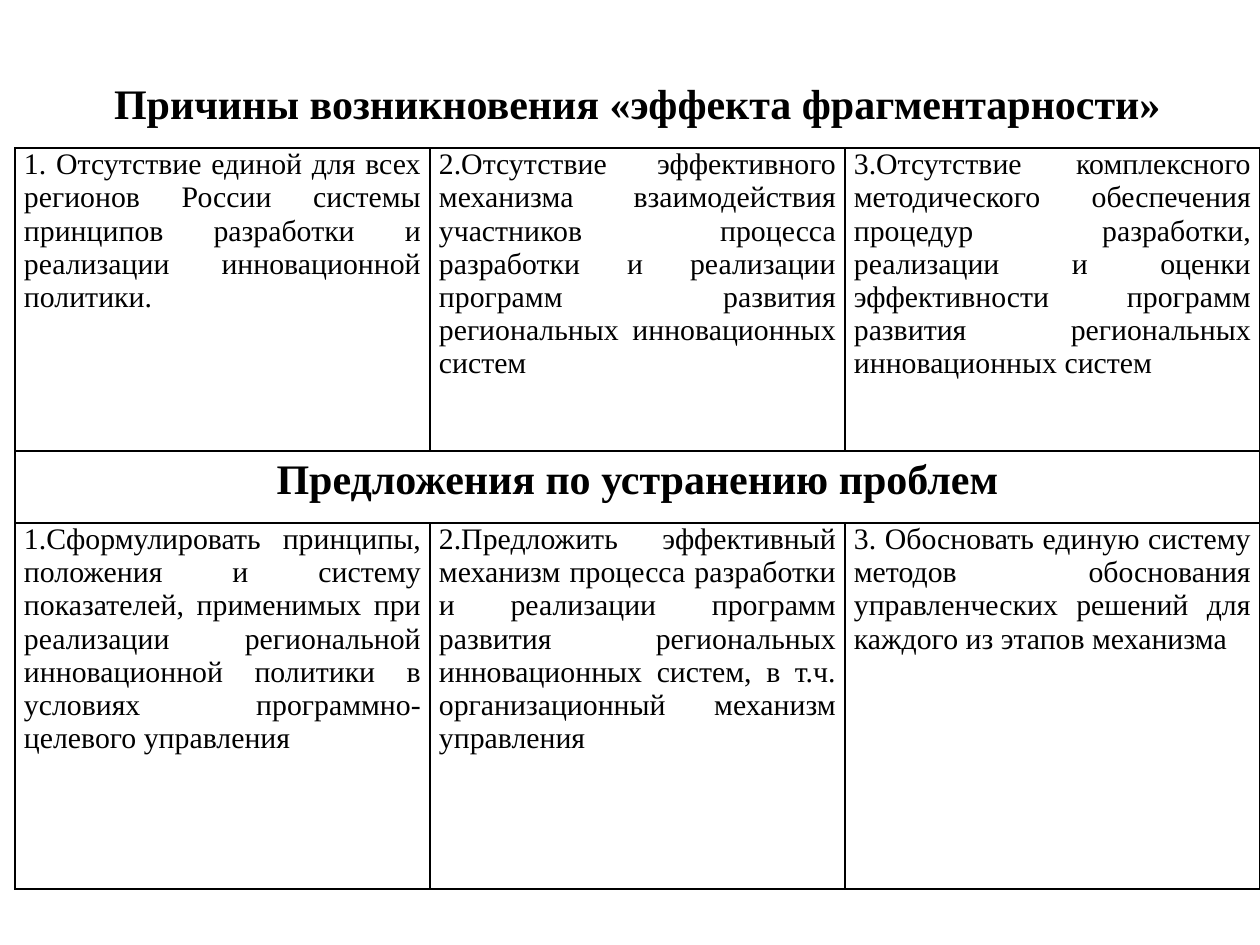
from lxml.etree import SubElement
from pptx import Presentation
from pptx.dml.color import RGBColor
from pptx.enum.text import PP_ALIGN
from pptx.oxml.ns import qn
from pptx.util import Emu, Pt

PX = 914400 // 126
BLACK = RGBColor(0x00, 0x00, 0x00)
WHITE = RGBColor(0xFF, 0xFF, 0xFF)
FONT = "Times New Roman"

SECTIONS = [
    ("Причины возникновения «эффекта фрагментарности»", [
        "1. Отсутствие единой для всех регионов России системы принципов "
        "разработки и реализации инновационной политики.",
        "2.Отсутствие эффективного механизма взаимодействия участников процесса "
        "разработки и реализации программ развития региональных инновационных систем",
        "3.Отсутствие комплексного методического обеспечения процедур разработки, "
        "реализации и оценки эффективности программ развития региональных "
        "инновационных систем",
    ]),
    ("Предложения по устранению проблем", [
        "1.Сформулировать принципы, положения и систему показателей, применимых при "
        "реализации региональной инновационной политики в условиях "
        "программно-целевого управления",
        "2.Предложить эффективный механизм процесса разработки и реализации программ "
        "развития региональных инновационных систем, в т.ч. организационный механизм "
        "управления",
        "3. Обосновать единую систему методов обоснования управленческих решений "
        "для каждого из этапов механизма",
    ]),
]
LEFT, TOP = 15, 76
COLUMN_WIDTH = 415
ROW_HEIGHTS = [72, 303, 72, 366]
BODY_INSET = 9


def px(length):
    return Emu(length * PX)


def write(cell, text, size, alignment, bold=False):
    paragraph = cell.text_frame.paragraphs[0]
    paragraph.alignment = alignment
    run = paragraph.add_run()
    run.text = text
    run.font.name = FONT
    run.font.size = Pt(size)
    run.font.bold = bold
    run.font.color.rgb = BLACK


def set_borders(cell, visible):
    """Draw the sides named in visible (of L, R, T, B) and clear the others."""
    properties = cell._tc.get_or_add_tcPr()
    for position, side in enumerate("LRTB"):
        line = SubElement(properties, qn(f"a:ln{side}"), w=str(Pt(1)))
        properties.insert(position, line)
        if side in visible:
            fill = SubElement(line, qn("a:solidFill"))
            SubElement(fill, qn("a:srgbClr"), val=str(BLACK))
        else:
            SubElement(line, qn("a:noFill"))


presentation = Presentation()
presentation.slide_width = px(1260)
presentation.slide_height = px(945)
slide = presentation.slides.add_slide(presentation.slide_layouts[6])

column_count = len(SECTIONS[0][1])
table = slide.shapes.add_table(
    len(ROW_HEIGHTS), column_count, px(LEFT), px(TOP),
    px(COLUMN_WIDTH * column_count), px(sum(ROW_HEIGHTS))).table
table.first_row = False
table.horz_banding = False
for column in table.columns:
    column.width = px(COLUMN_WIDTH)
for row, height in zip(table.rows, ROW_HEIGHTS):
    row.height = px(height)

for section, (heading, points) in enumerate(SECTIONS):
    heading_row = 2 * section
    heading_cell = table.cell(heading_row, 0)
    heading_cell.merge(table.cell(heading_row, column_count - 1))
    write(heading_cell, heading, 24, PP_ALIGN.CENTER, bold=True)
    for column, point in enumerate(points):
        point_cell = table.cell(heading_row + 1, column)
        point_cell.margin_left = point_cell.margin_right = px(BODY_INSET)
        point_cell.margin_top = point_cell.margin_bottom = 0
        write(point_cell, point, 17, PP_ALIGN.JUSTIFY)

for row_number, row in enumerate(table.rows):
    for cell in row.cells:
        if row_number == 0:
            cell.fill.background()
            set_borders(cell, "B")
        else:
            cell.fill.solid()
            cell.fill.fore_color.rgb = WHITE
            set_borders(cell, "LRTB")

presentation.save("out.pptx")
